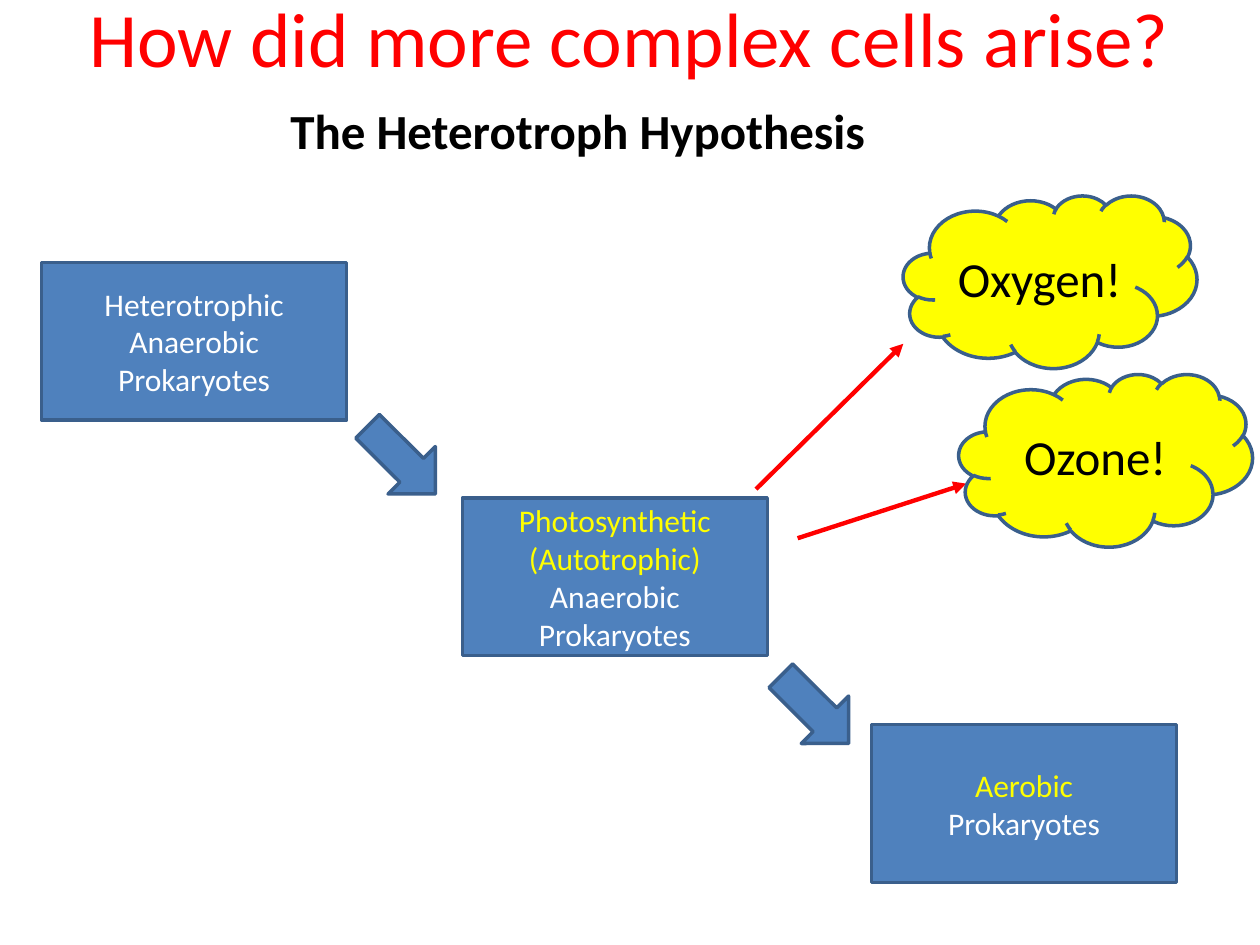
from pptx import Presentation
from pptx.util import Cm, Pt
from pptx.dml.color import RGBColor
from pptx.enum.shapes import MSO_SHAPE, MSO_CONNECTOR
from pptx.enum.text import PP_ALIGN, MSO_ANCHOR
from pptx.oxml.ns import qn
from lxml.etree import SubElement


def write(sp, lines, size, colors, bold=False, anchor=MSO_ANCHOR.MIDDLE):
    tf = sp.text_frame
    tf.word_wrap = True
    tf.vertical_anchor = anchor
    tf.text = "\n".join(lines)
    for p, color in zip(tf.paragraphs, colors):
        p.alignment = PP_ALIGN.CENTER
        f = p.runs[0].font
        f.name = "Calibri"
        f.size = Pt(size)
        f.bold = bold
        f.color.rgb = RGBColor.from_string(color)


def add_shape(kind, x, y, w, h, fill):
    sp = s.shapes.add_shape(kind, Cm(x), Cm(y), Cm(w), Cm(h))
    sp.shadow.inherit = False
    sp.fill.solid()
    sp.fill.fore_color.rgb = RGBColor.from_string(fill)
    sp.line.color.rgb = RGBColor.from_string("3A5F8C")
    sp.line.width = Pt(2)
    return sp


BLUE, YELLOW, WHITE, RED, BLACK = "4F81BD", "FFFF00", "FFFFFF", "FF0000", "000000"

prs = Presentation()
prs.slide_width = Cm(25.4)
prs.slide_height = Cm(19.05)
s = prs.slides.add_slide(prs.slide_layouts[6])

title = s.shapes.add_textbox(Cm(1.27), Cm(-0.84), Cm(22.86), Cm(3.18))
write(title, ["How did more complex cells arise?"], 44, [RED])

for x, y, lines, colors in [
    (0.84, 5.29, ["Heterotrophic", "Anaerobic", "Prokaryotes"], [WHITE] * 3),
    (9.32, 10.04, ["Photosynthetic (Autotrophic)", "Anaerobic", "Prokaryotes"], [YELLOW, WHITE, WHITE]),
    (17.57, 14.61, ["Aerobic", "Prokaryotes"], [YELLOW, WHITE]),
]:
    write(add_shape(MSO_SHAPE.RECTANGLE, x, y, 6.15, 3.18, BLUE), lines, 18, colors)

for x, y in [(7.42, 8.31), (15.75, 13.34)]:
    sp = add_shape(MSO_SHAPE.DOWN_ARROW, x, y, 1.35, 1.93, BLUE)
    sp.rotation = 314.9

for x1, y1, x2, y2 in [(15.24, 9.86, 18.21, 6.93), (16.08, 10.85, 19.48, 9.75)]:
    cn = s.shapes.add_connector(MSO_CONNECTOR.STRAIGHT, Cm(x1), Cm(y1), Cm(x2), Cm(y2))
    cn.line.color.rgb = RGBColor.from_string(RED)
    cn.line.width = Pt(2.5)
    SubElement(cn.line._get_or_add_ln(), qn("a:tailEnd"), type="triangle")
    SubElement(cn._element.spPr, qn("a:effectLst"))

for x, y, text in [(18.21, 3.94, "Oxygen!"), (19.33, 7.54, "Ozone!")]:
    write(add_shape(MSO_SHAPE.CLOUD, x, y, 5.92, 3.48, YELLOW), [text], 28, [BLACK])

subtitle = s.shapes.add_textbox(Cm(4.24), Cm(1.91), Cm(14.81), Cm(1.45))
write(subtitle, ["The Heterotroph Hypothesis"], 28, [BLACK], True, MSO_ANCHOR.TOP)

prs.save("out.pptx")
